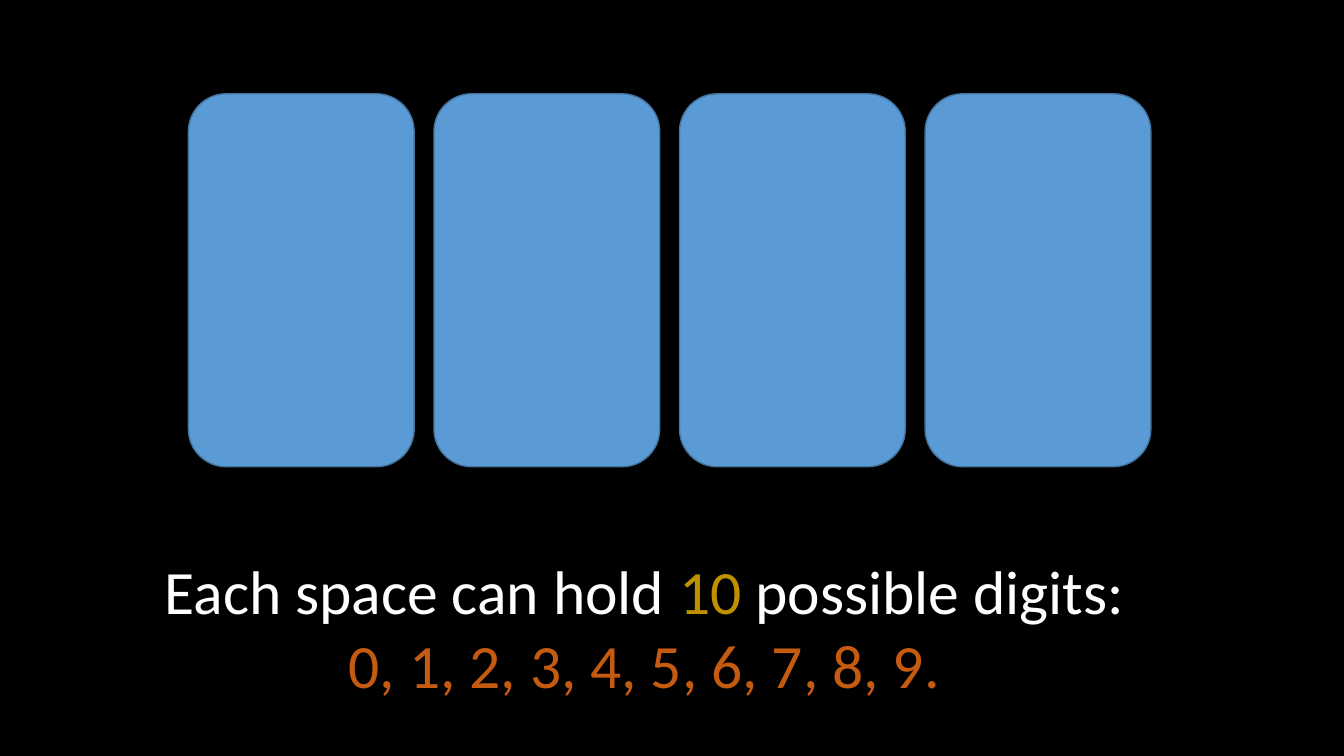
"""Build a slide with four digit spaces and the digits each can hold."""
from pptx import Presentation
from pptx.dml.color import RGBColor
from pptx.enum.shapes import MSO_SHAPE
from pptx.enum.text import MSO_AUTO_SIZE, PP_ALIGN
from pptx.util import Pt

ROUND = MSO_SHAPE.ROUNDED_RECTANGLE
CENTER = PP_ALIGN.CENTER
GROW = MSO_AUTO_SIZE.SHAPE_TO_FIT_TEXT
BLACK = RGBColor(0x00, 0x00, 0x00)
WHITE = RGBColor(0xFF, 0xFF, 0xFF)
BLUE = RGBColor(0x5B, 0x9B, 0xD5)
EDGE = RGBColor(0x43, 0x73, 0x9E)
GOLD = RGBColor(0xBF, 0x90, 0x00)
RUST = RGBColor(0xC5, 0x5A, 0x11)

COUNT = 4
LEFT, TOP = 134.6, 67
WIDTH, HEIGHT = 161.3, 266.4
STEP = 175.4

LINES = [
    [("Each space can hold ", WHITE), ("10", GOLD), (" possible digits:", WHITE)],
    [(", ".join(str(digit) for digit in range(10)) + ".", RUST)],
]

deck = Presentation()
deck.slide_width = Pt(960)
deck.slide_height = Pt(540)
slide = deck.slides.add_slide(deck.slide_layouts[6])
slide.background.fill.solid()
slide.background.fill.fore_color.rgb = BLACK

for index in range(COUNT):
    space = slide.shapes.add_shape(
        ROUND, Pt(LEFT + index * STEP), Pt(TOP), Pt(WIDTH), Pt(HEIGHT))
    space.shadow.inherit = False
    space.fill.solid()
    space.fill.fore_color.rgb = BLUE
    space.line.color.rgb = EDGE
    space.line.width = Pt(1)

label = slide.shapes.add_textbox(Pt(106.6), Pt(391.7), Pt(707.8), Pt(113.8))
frame = label.text_frame
frame.word_wrap = False
frame.auto_size = GROW
frame.text = "\n".join("" for line in LINES)
for para, line in zip(frame.paragraphs, LINES):
    para.alignment = CENTER
    for text, color in line:
        run = para.add_run()
        run.text = text
        run.font.name = "Calibri"
        run.font.size = Pt(44)
        run.font.color.rgb = color

deck.save("out.pptx")
